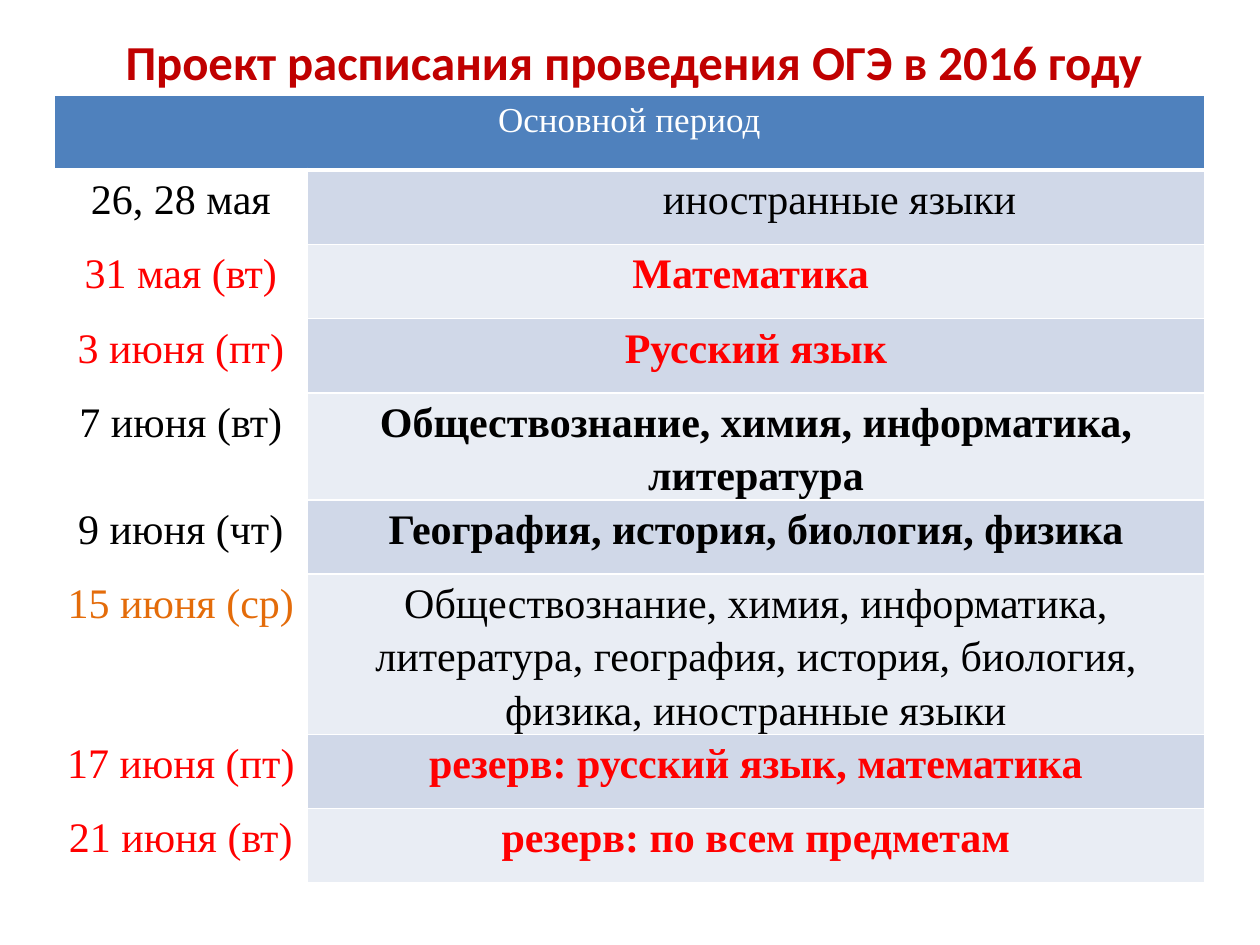
from dataclasses import dataclass

from lxml.etree import SubElement
from pptx import Presentation
from pptx.dml.color import RGBColor
from pptx.enum.text import MSO_ANCHOR, MSO_AUTO_SIZE, PP_ALIGN
from pptx.oxml.ns import qn
from pptx.util import Inches, Pt


@dataclass(frozen=True)
class Theme:
    title_font: str = "Calibri"
    table_font: str = "Times New Roman"
    title_size: float = 27.9
    header_size: int = 20
    body_size: int = 24
    title: str = "C00000"
    header: str = "4F81BD"
    white: str = "FFFFFF"
    black: str = "000000"
    red: str = "FF0000"
    orange: str = "E46C0A"
    bands: tuple = ("D0D8E8", "E9EDF4")


THEME = Theme()

SCHEDULE = [
    ("26, 28 мая", THEME.black, "иностранные языки", THEME.black, False),
    ("31 мая (вт)", THEME.red, "Математика ", THEME.red, True),
    ("3 июня (пт)", THEME.red, "Русский язык", THEME.red, True),
    ("7 июня (вт)", THEME.black, "Обществознание, химия, информатика, литература",
     THEME.black, True),
    ("9 июня (чт)", THEME.black, "География, история, биология, физика",
     THEME.black, True),
    ("15 июня (ср)", THEME.orange,
     "Обществознание, химия, информатика, литература, география, история, "
     "биология, физика, иностранные языки", THEME.black, False),
    ("17 июня (пт)", THEME.red, "резерв: русский язык, математика", THEME.red, True),
    ("21 июня (вт)", THEME.red, "резерв: по всем предметам", THEME.red, True),
]
COLUMN_WIDTHS = (2.01, 7.12)
ROW_HEIGHT = 0.59
TALL_ROW = 6
LANGUAGES_INDENT = 1.33


def style_font(font, name, size, color, bold):
    font.name = name
    font.size = Pt(size)
    font.bold = bold
    font.color.rgb = RGBColor.from_string(color)


def add_title(page, text):
    box = page.shapes.title
    box.left, box.top = Inches(0.51), Inches(0.13)
    box.width, box.height = Inches(9.22), Inches(0.61)
    frame = box.text_frame
    frame.text = text
    frame.word_wrap = True
    frame.auto_size = MSO_AUTO_SIZE.NONE
    frame.vertical_anchor = MSO_ANCHOR.MIDDLE
    frame.margin_right = Inches(0.28)
    frame.margin_top = Inches(0.1)
    frame.margin_bottom = 0
    para = frame.paragraphs[0]
    para.alignment = PP_ALIGN.CENTER
    style_font(para.font, THEME.title_font, THEME.title_size, THEME.title, True)


def set_borders(cell, bottom_width):
    properties = cell._tc.get_or_add_tcPr()
    widths = {"a:lnL": 1, "a:lnR": 1, "a:lnT": 1, "a:lnB": bottom_width}
    for position, (tag, width) in enumerate(widths.items()):
        line = SubElement(properties, qn(tag), w=str(Pt(width)))
        fill = SubElement(line, qn("a:solidFill"))
        SubElement(fill, qn("a:srgbClr"), val=THEME.white)
        properties.insert(position, line)


def fill_cell(cell, text, fill, color, size=THEME.body_size, bold=False,
              indent=0, bottom_width=1):
    cell.fill.solid()
    cell.fill.fore_color.rgb = RGBColor.from_string(fill)
    cell.margin_left = Inches(indent)
    cell.margin_right = cell.margin_top = cell.margin_bottom = 0
    cell.text = text
    para = cell.text_frame.paragraphs[0]
    para.alignment = PP_ALIGN.CENTER
    para.line_spacing = 1.15
    para.space_after = Pt(10)
    style_font(para.font, THEME.table_font, size, color, bold)
    set_borders(cell, bottom_width)


def add_schedule(page):
    row_count = len(SCHEDULE) + 1
    table = page.shapes.add_table(
        row_count, len(COLUMN_WIDTHS), Inches(0.43), Inches(0.76),
        Inches(sum(COLUMN_WIDTHS)), Inches(ROW_HEIGHT * (row_count + 1))).table
    for column, width in zip(table.columns, COLUMN_WIDTHS):
        column.width = Inches(width)
    for index, row in enumerate(table.rows):
        row.height = Inches(ROW_HEIGHT * (2 if index == TALL_ROW else 1))

    header = table.cell(0, 0)
    header.merge(table.cell(0, 1))
    fill_cell(header, "Основной период", THEME.header, THEME.white,
              size=THEME.header_size, bottom_width=3)
    for index, (date, date_color, subject, color, bold) in enumerate(SCHEDULE):
        fill_cell(table.cell(index + 1, 0), date, THEME.white, date_color)
        fill_cell(table.cell(index + 1, 1), subject, THEME.bands[index % 2], color,
                  bold=bold, indent=LANGUAGES_INDENT if index == 0 else 0)


def main():
    deck = Presentation()
    deck.slide_width, deck.slide_height = Inches(10), Inches(7.5)
    page = deck.slides.add_slide(deck.slide_layouts[5])
    add_title(page, "Проект расписания проведения ОГЭ в 2016 году")
    add_schedule(page)
    deck.save("out.pptx")


if __name__ == "__main__":
    main()
